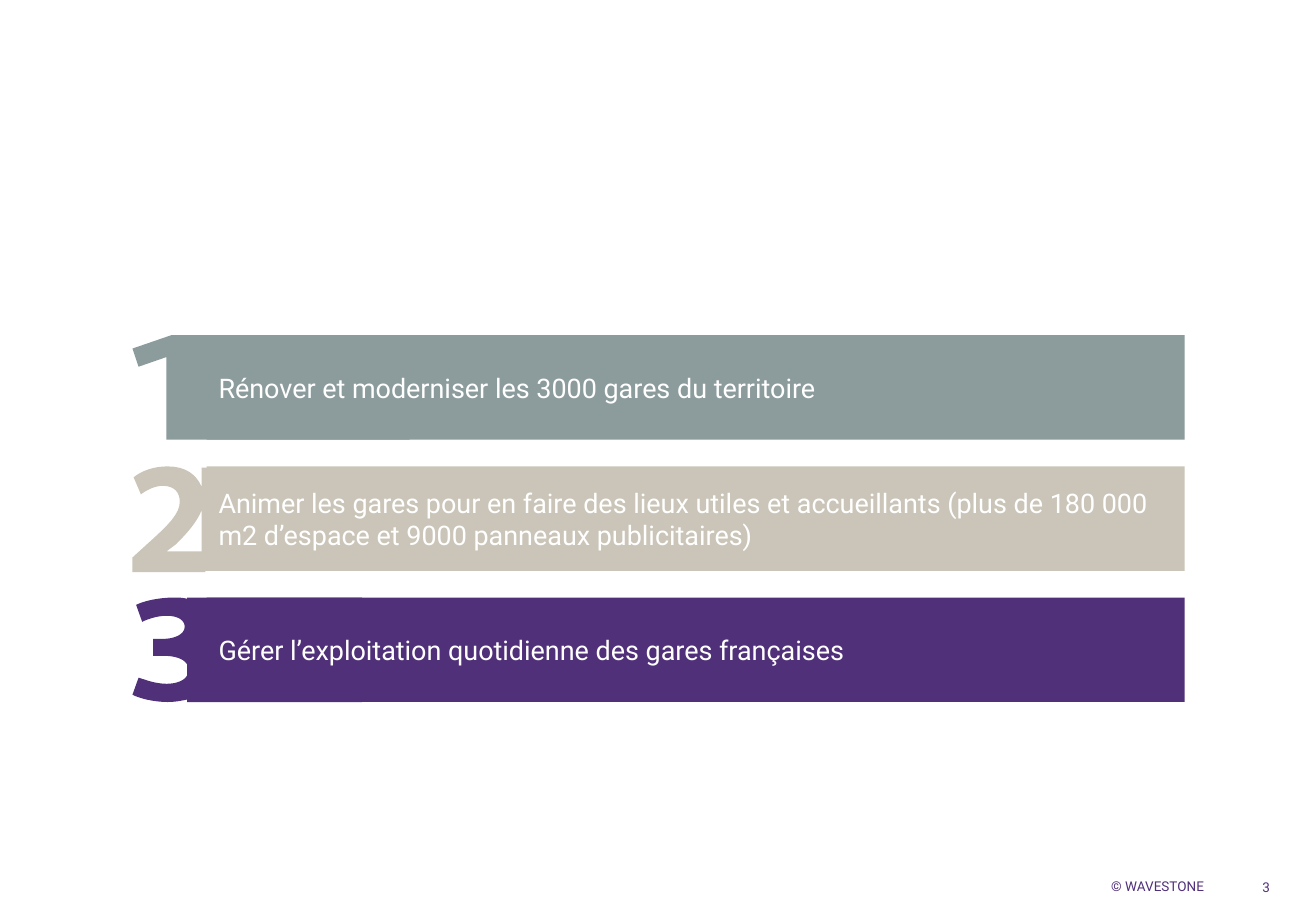
import pptx
import pptx.util
import pptx.dml.color
import pptx.enum.shapes
import pptx.enum.text
from pptx.util import Inches

THEME = {
    "font": "Roboto",
    "sage": "8C9B9C",
    "sand": "CAC5B8",
    "purple": "503078",
    "white": "FFFFFF",
    "goal_size": 16,
    "footer_size": 8,
}
ALIGN = pptx.enum.text.PP_ALIGN
ANCHOR = pptx.enum.text.MSO_ANCHOR


def flatten(outline, steps=8):
    points = [outline[0]]
    for segment in outline[1:]:
        if len(segment) == 2:
            points.append(segment)
            continue
        x0, y0 = points[-1]
        x1, y1, x2, y2, x3, y3 = segment
        for step in range(1, steps + 1):
            t = step / steps
            u = 1 - t
            points.append((
                u**3 * x0 + 3 * u * u * t * x1 + 3 * u * t * t * x2 + t**3 * x3,
                u**3 * y0 + 3 * u * u * t * y1 + 3 * u * t * t * y2 + t**3 * y3,
            ))
    return [(Inches(x), Inches(y)) for x, y in points]


def write(frame, text, size, color, align, anchor):
    frame.word_wrap = True
    frame.vertical_anchor = anchor
    paragraph = frame.paragraphs[0]
    paragraph.alignment = align
    run = paragraph.add_run()
    run.text = text
    run.font.name = THEME["font"]
    run.font.size = pptx.util.Pt(size)
    run.font.color.rgb = pptx.dml.color.RGBColor.from_string(color)


digit_one = [[
    (1.41, 2.76), (1.09, 2.87), (1.14, 3.02), (1.37, 2.94),
    (1.37, 3.62), (3.37, 3.62), (3.37, 2.76),
]]
digit_two = [
    [
        (2.86, 3.85), (1.66, 3.85), (1.66, 4.01),
        (1.62, 3.91, 1.53, 3.84, 1.38, 3.84),
        (1.26, 3.84, 1.16, 3.88, 1.1, 3.93),
        (1.16, 4.07),
        (1.2, 4.04, 1.27, 4, 1.34, 4),
        (1.44, 4, 1.48, 4.06, 1.48, 4.13),
        (1.48, 4.23, 1.39, 4.32, 1.2, 4.49),
        (1.09, 4.59), (1.09, 4.71), (1.69, 4.71), (1.69, 4.7), (2.86, 4.7),
    ],
    [
        (1.37, 4.54), (1.45, 4.48),
        (1.54, 4.39, 1.62, 4.3, 1.66, 4.2),
        (1.66, 4.54),
    ],
]
digit_three = [[
    (1.54, 4.92), (1.54, 4.93),
    (1.5, 4.92, 1.47, 4.92, 1.43, 4.92),
    (1.3, 4.92, 1.18, 4.95, 1.12, 4.98),
    (1.17, 5.12),
    (1.21, 5.1, 1.29, 5.07, 1.37, 5.07),
    (1.47, 5.07, 1.52, 5.11, 1.52, 5.16),
    (1.52, 5.23, 1.42, 5.26, 1.35, 5.26),
    (1.26, 5.26), (1.26, 5.4), (1.35, 5.4),
    (1.43, 5.4, 1.51, 5.42, 1.54, 5.47),
    (1.54, 5.56),
    (1.52, 5.6, 1.46, 5.63, 1.37, 5.63),
    (1.27, 5.63, 1.18, 5.59, 1.14, 5.58),
    (1.09, 5.72),
    (1.15, 5.75, 1.26, 5.78, 1.38, 5.78),
    (1.44, 5.78, 1.49, 5.77, 1.54, 5.76),
    (1.54, 5.78), (2.98, 5.78), (2.98, 4.92),
]]

goals = [
    (digit_one, THEME["sage"], "Rénover et moderniser les 3000 gares du territoire"),
    (digit_two, THEME["sand"],
     "Animer les gares pour en faire des lieux utiles et accueillants "
     "(plus de 180 000 m2 d’espace et 9000 panneaux publicitaires)"),
    (digit_three, THEME["purple"], "Gérer l’exploitation quotidienne des gares françaises"),
]
footers = [(9.04, 0.87, "© WAVESTONE", ANCHOR.TOP), (10.06, 0.39, "3", ANCHOR.MIDDLE)]

deck = pptx.Presentation()
deck.slide_width = Inches(10.83)
deck.slide_height = Inches(7.5)
slide = deck.slides.add_slide(deck.slide_layouts[6])

for row, (digit, color, goal) in enumerate(goals):
    first, *holes = [flatten(outline) for outline in digit]
    builder = slide.shapes.build_freeform(*first[0])
    builder.add_line_segments(first[1:], close=True)
    for hole in holes:
        builder.move_to(*hole[0])
        builder.add_line_segments(hole[1:], close=True)
    numeral = builder.convert_to_shape()
    bar = slide.shapes.add_shape(
        pptx.enum.shapes.MSO_SHAPE.RECTANGLE,
        Inches(1.7), Inches(2.76 + 1.08 * row), Inches(8.05), Inches(0.86))
    for part in (numeral, bar):
        part.shadow.inherit = False
        part.fill.solid()
        part.fill.fore_color.rgb = pptx.dml.color.RGBColor.from_string(color)
        part.line.fill.background()
    write(bar.text_frame, goal, THEME["goal_size"], THEME["white"], ALIGN.LEFT, ANCHOR.MIDDLE)

for left, width, label, anchor in footers:
    footer = slide.shapes.add_textbox(Inches(left), Inches(7.23), Inches(width), Inches(0.27))
    frame = footer.text_frame
    frame.margin_left = frame.margin_top = frame.margin_right = 0
    frame.margin_bottom = Inches(0.13)
    write(frame, label, THEME["footer_size"], THEME["purple"], ALIGN.RIGHT, anchor)

deck.save("out.pptx")
